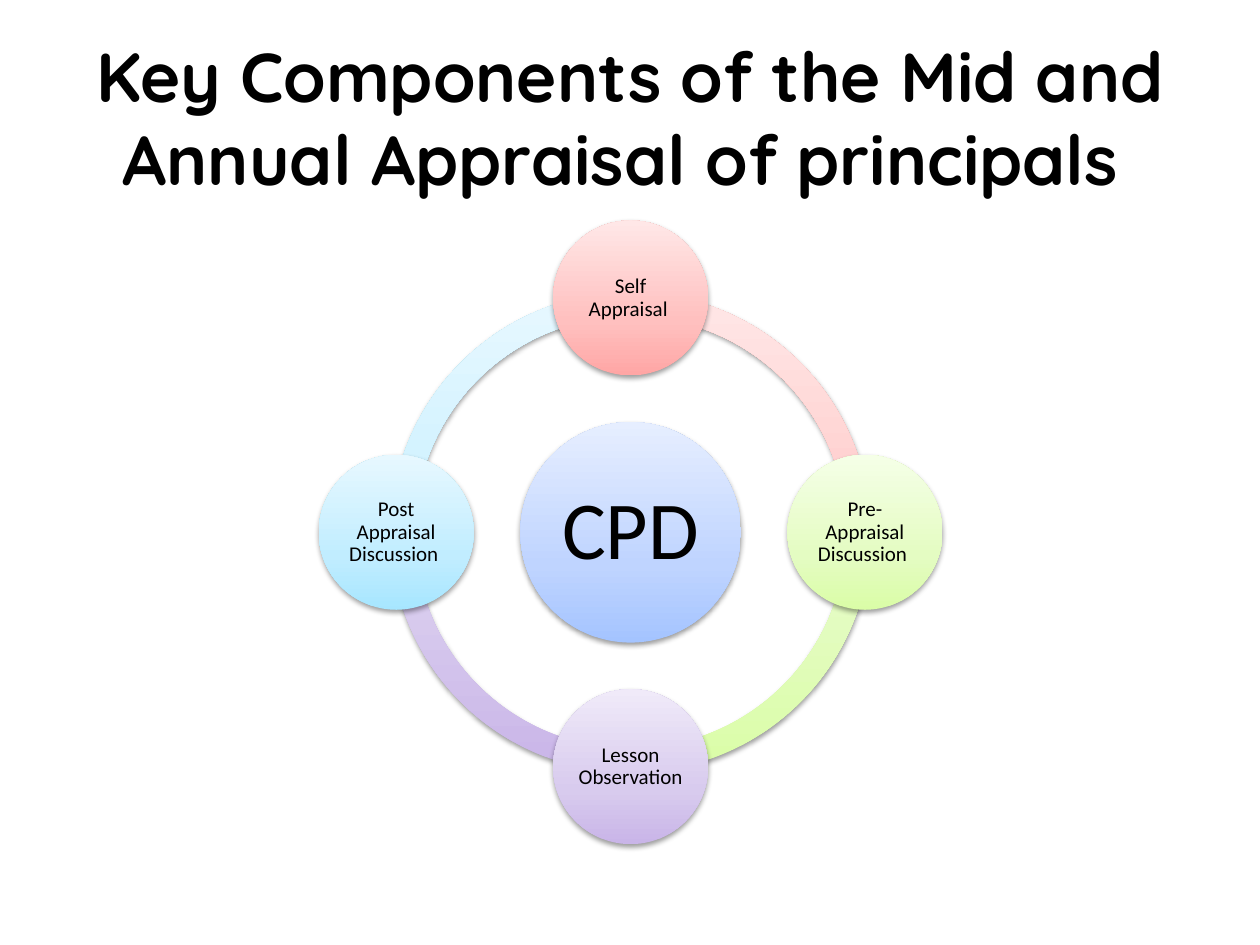
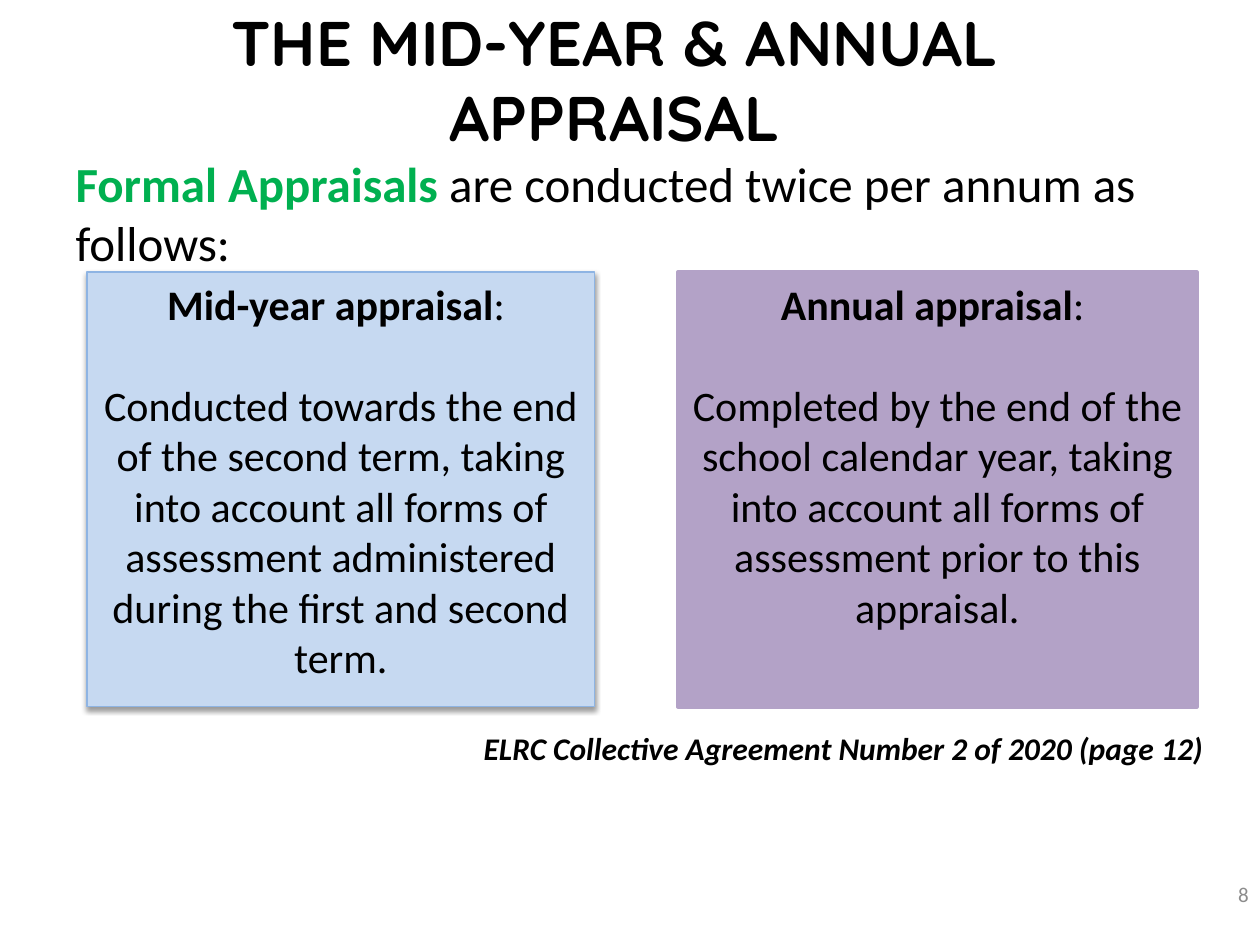
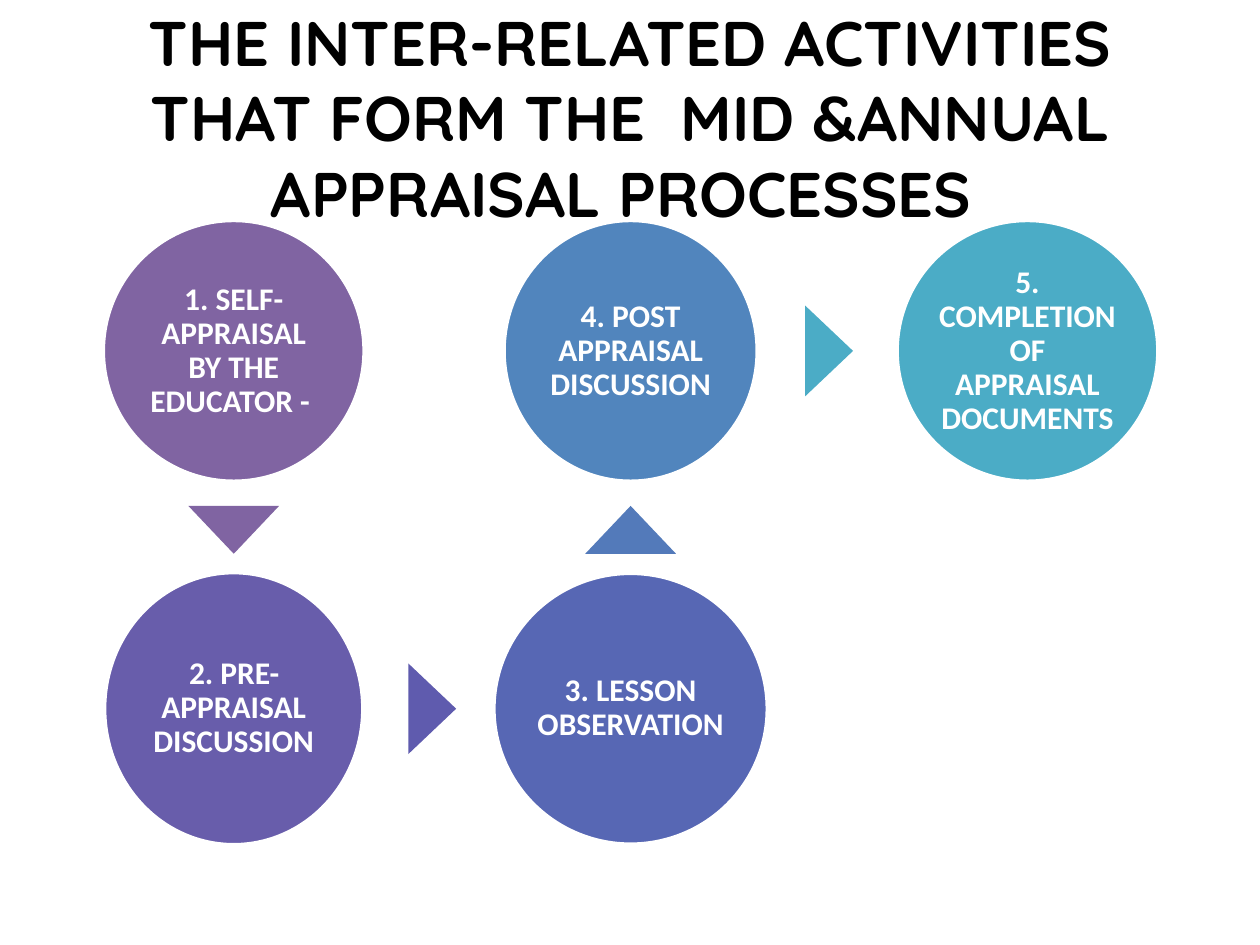
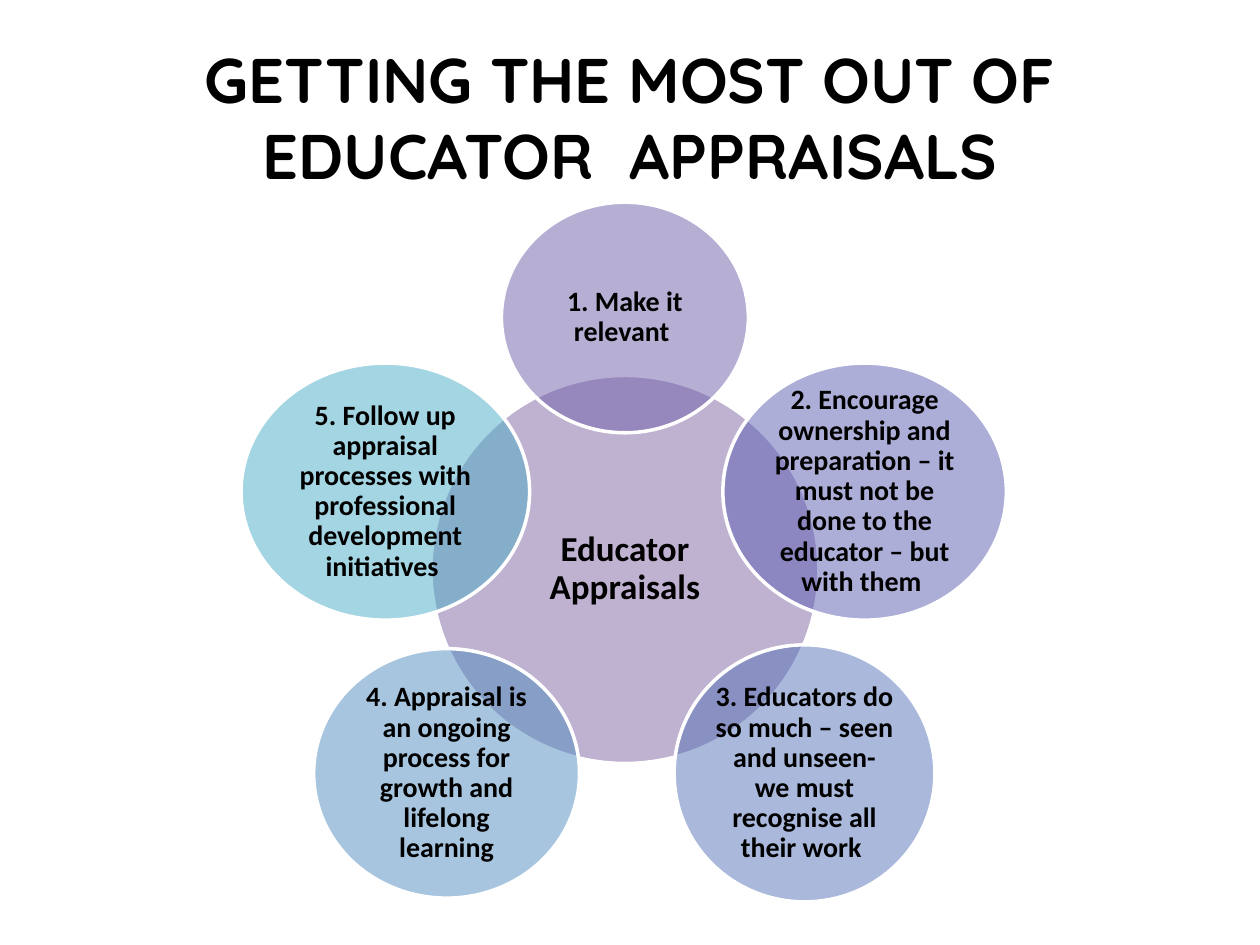
from itertools import pairwise
from math import cos, radians, sin

from lxml import etree
from pptx import Presentation
from pptx.dml.color import RGBColor
from pptx.enum.shapes import MSO_SHAPE
from pptx.enum.text import MSO_ANCHOR, MSO_AUTO_SIZE, PP_ALIGN
from pptx.oxml.ns import qn
from pptx.util import Inches, Pt

ARC, OVAL = MSO_SHAPE.BLOCK_ARC, MSO_SHAPE.OVAL
RECT, WEDGE = MSO_SHAPE.RECTANGLE, MSO_SHAPE.ISOSCELES_TRIANGLE
TOP, MIDDLE = MSO_ANCHOR.TOP, MSO_ANCHOR.MIDDLE
LEFT, CENTER, RIGHT = PP_ALIGN.LEFT, PP_ALIGN.CENTER, PP_ALIGN.RIGHT
FIXED = MSO_AUTO_SIZE.NONE

HEAD, BODY = "Quicksand", "Calibri"
BLACK = RGBColor(0x00, 0x00, 0x00)
WHITE = RGBColor(0xFF, 0xFF, 0xFF)
GRAY = RGBColor(0x8C, 0x8C, 0x8C)
GREEN = RGBColor(0x00, 0xB0, 0x50)
PALE = RGBColor(0xC6, 0xD9, 0xF1)
EDGE = RGBColor(0x8E, 0xB4, 0xE3)
LILAC = RGBColor(0xB3, 0xA2, 0xC7)
PURPLE = RGBColor(0x80, 0x64, 0xA2)
GRAPE = RGBColor(0x68, 0x5D, 0xAB)
IRIS = RGBColor(0x5F, 0x5B, 0xAE)
INDIGO = RGBColor(0x57, 0x67, 0xB4)
COBALT = RGBColor(0x53, 0x7A, 0xBA)
STEEL = RGBColor(0x51, 0x85, 0xBD)
TEAL = RGBColor(0x4B, 0xAC, 0xC6)
MAUVE = RGBColor(0x6E, 0x5F, 0xA9)
VIOLET = RGBColor(0x5A, 0x5E, 0xB1)
DENIM = RGBColor(0x55, 0x72, 0xB8)
AZURE = RGBColor(0x50, 0x8C, 0xBF)


def shades(*codes):
    return [RGBColor.from_string(code) for code in codes]


BLUES = shades("A4C4FF", "BFD4FF", "E6EEFF")
REDS = shades("FFA6A5", "FFC0BF", "FFE7E7")
LIMES = shades("DAFDA7", "E4FCC2", "F5FFE7")
PLUMS = shades("C9B5E8", "D8CBEE", "F0EAF9")
SKIES = shades("A7E6FF", "C1EDFF", "E7F8FF")


def add_tag(parent, tag, **attrs):
    node = etree.SubElement(parent, qn(tag))
    for name, value in attrs.items():
        node.set(name, str(value))
    return node


def style(para, size, color=BLACK, bold=False, align=CENTER, font=BODY):
    para.alignment = align
    for run in para.runs:
        run.font.name = font
        run.font.size = Pt(size)
        run.font.bold = bold
        run.font.color.rgb = color


def place(item, box):
    item.left, item.top, item.width, item.height = map(Inches, box)


def add_form(slide, kind, box, color=None, line=None, width=2):
    form = slide.shapes.add_shape(kind, *map(Inches, box))
    form.shadow.inherit = False
    if color is not None:
        form.fill.solid()
        form.fill.fore_color.rgb = color
    if line is None:
        form.line.fill.background()
    else:
        form.line.color.rgb = line
        form.line.width = Pt(width)
    return form


def add_shadow(form):
    effects = form.element.spPr.find(qn("a:effectLst"))
    cast = add_tag(effects, "a:outerShdw", blurRad=Pt(3.1), dist=Pt(1.6),
                   dir=5400000, rotWithShape=0)
    tint = add_tag(cast, "a:srgbClr", val=BLACK)
    add_tag(tint, "a:alpha", val=38000)


def add_blend(form, colors):
    form.fill.gradient()
    form.fill.gradient_angle = 90
    stops = form.element.spPr.find(".//" + qn("a:gsLst"))
    for stop in list(stops):
        stops.remove(stop)
    for spot, color in zip((0, 35000, 100000), colors):
        add_tag(add_tag(stops, "a:gs", pos=spot), "a:srgbClr", val=color)
    add_shadow(form)


def make_clear(form):
    fill = form.element.spPr.find(qn("a:solidFill"))
    add_tag(fill[0], "a:alpha", val=50000)


def centered(x, y, width, height):
    return x - width / 2, y - height / 2, width, height


def add_disc(slide, box, text, size, ink=BLACK, bold=True, color=None, line=WHITE):
    disc = add_form(slide, OVAL, box, color, line)
    frame = disc.text_frame
    frame.word_wrap = True
    frame.vertical_anchor = MIDDLE
    frame.margin_left = frame.margin_right = Inches(0.02)
    frame.margin_top = frame.margin_bottom = Inches(0.02)
    frame.text = text
    para = frame.paragraphs[0]
    para.line_spacing = 0.9
    style(para, size, ink, bold)
    return disc


def add_title(slide, text, size=36, box=(0.5, 0.3, 9, 1.25)):
    title = slide.shapes.title
    place(title, box)
    frame = title.text_frame
    frame.text = text
    frame.auto_size = FIXED
    frame.vertical_anchor = MIDDLE
    style(frame.paragraphs[0], size, bold=True, font=HEAD)


def add_label(slide, box, text, size, color=BLACK, bold=False, align=LEFT):
    label = slide.shapes.add_textbox(*map(Inches, box))
    frame = label.text_frame
    frame.word_wrap = True
    frame.text = text
    style(frame.paragraphs[0], size, color, bold, align)
    return label


def add_cycle(slide, box):
    left, top, side, _ = box
    x, y = left + side / 2, top + side / 2
    node, ring, core = 1.23, 3.81, 1.75
    reach = (side - node) / 2
    for start, colors in ((108, SKIES), (54, PLUMS), (0, LIMES), (162, REDS)):
        arc = add_form(slide, ARC, centered(x, y, ring, ring))
        for i, value in enumerate((start, (start + 54) % 216, 0.05)):
            arc.adjustments[i] = value
        add_blend(arc, colors)
    hub = add_disc(slide, centered(x, y, core, core), "CPD ", 47, bold=False, line=None)
    add_blend(hub, BLUES)
    steps = (("Self Appraisal ", REDS), ("Pre- Appraisal Discussion ", LIMES),
             ("Lesson Observation ", PLUMS), ("Post Appraisal Discussion ", SKIES))
    for i, (text, colors) in enumerate(steps):
        turn = radians(90 * i)
        spot = centered(x + reach * sin(turn), y - reach * cos(turn), node, node)
        add_blend(add_disc(slide, spot, text, 12, bold=False, line=None), colors)


def add_intro(slide, box):
    body = slide.placeholders[1]
    place(body, box)
    frame = body.text_frame
    frame.auto_size = FIXED
    para = frame.paragraphs[0]
    props = para._p.get_or_add_pPr()
    props.set("marL", "0")
    props.set("indent", "0")
    add_tag(props, "a:buNone")
    para.space_before = Pt(0)
    for text in ("Formal Appraisals ", "are conducted twice per annum as follows:"):
        para.add_run().text = text
    style(para, 28, align=LEFT)
    lead = para.runs[0].font
    lead.bold = True
    lead.color.rgb = GREEN


def add_card(slide, box, head, text, color, line, width):
    card = add_form(slide, RECT, box, color, line, width)
    frame = card.text_frame
    frame.word_wrap = True
    frame.vertical_anchor = TOP
    first = frame.paragraphs[0]
    for part in (head, ": "):
        first.add_run().text = part
    second = frame.add_paragraph()
    second.text = text
    second.space_before = Pt(29)
    for para in (first, second):
        style(para, 24)
    first.runs[0].font.bold = True
    return card


def add_flow(slide, box):
    left, top, width, height = box
    across, down, size = 3.15, 2.84, 2.07
    steps = (
        ("1. SELF- APPRAISAL BY THE EDUCATOR - ", PURPLE, 0, 0, 2.07, 2.07),
        ("2. PRE-APPRAISAL DISCUSSION", GRAPE, 0, 1, 2.05, 2.16),
        ("3. LESSON OBSERVATION", INDIGO, 1, 1, 2.17, 2.15),
        ("4. POST APPRAISAL DISCUSSION", STEEL, 1, 0, 2.01, 2.07),
        ("5. COMPLETION OF APPRAISAL DOCUMENTS ", TEAL, 2, 0, 2.07, 2.07),
    )
    spots = []
    for text, color, col, row, wide, high in steps:
        x = left + width / 2 + (col - 1) * across
        y = top + size / 2 + row * down
        spots.append((x, y))
        add_disc(slide, centered(x, y, wide, high), text, 18, WHITE, color=color)
    tints = (PURPLE, IRIS, COBALT, TEAL)
    for ((x1, y1), (x2, y2)), color in zip(pairwise(spots), tints):
        spot = centered((x1 + x2) / 2, (y1 + y2) / 2, 0.72, 0.38)
        wedge = add_form(slide, WEDGE, spot, color)
        wedge.rotation = 90 if x2 > x1 else 180 if y2 > y1 else 0


def add_petals(slide, box):
    left, top, side, _ = box
    x, y = left + side / 2, top + side / 2
    reach = 2
    hub = add_disc(slide, box, "Educator Appraisals", 20, color=PURPLE)
    make_clear(hub)
    petals = (
        ("1. Make it relevant ", MAUVE, 1.96, 1.83, 0),
        ("2. Encourage ownership and preparation – it must not be done to the "
         "educator – but with them ", VIOLET, 2.25, 2.04, 0),
        ("3. Educators do so much – seen and unseen- we must recognise all "
         "their work ", DENIM, 2.07, 2.04, 0.25),
        ("4. Appraisal is an ongoing process for growth and lifelong learning",
         AZURE, 2.11, 1.98, -0.24),
        ("5. Follow up appraisal processes with professional development "
         "initiatives ", TEAL, 2.29, 2.04, 0),
    )
    for i, (text, color, wide, high, push) in enumerate(petals):
        turn = radians(72 * i)
        spot = centered(x + reach * sin(turn) + push, y - reach * cos(turn), wide, high)
        make_clear(add_disc(slide, spot, text, 16, color=color))


def build_parts(slide):
    add_title(slide, "Key Components of the Mid and Annual Appraisal of principals ", 39.6)
    add_cycle(slide, (2.53, 1.75, 4.95, 4.95))


def build_terms(slide):
    add_title(slide, "THE MID-YEAR & ANNUAL APPRAISAL", box=(0.38, 0, 9, 1.25))
    add_intro(slide, (0.5, 1.17, 9, 4.79))
    card = add_card(
        slide, (0.69, 2.16, 4.03, 3.45), "Mid-year appraisal",
        "Conducted towards the end of the second term, taking into account all "
        "forms of assessment administered during the first and second term.",
        PALE, EDGE, 0.75)
    add_shadow(card)
    add_card(
        slide, (5.38, 2.16, 4.12, 3.45), "Annual appraisal",
        "Completed by the end of the school calendar year, taking into account "
        "all forms of assessment prior to this appraisal.",
        LILAC, LILAC, 2)
    cite = add_label(slide, (3.74, 5.74, 6.43, 0.4),
                     "ELRC Collective Agreement Number 2 of 2020 (page 12)", 18, bold=True)
    cite.text_frame.paragraphs[0].runs[0].font.italic = True
    page = add_label(slide, (7.68, 6.9, 2.33, 0.4), "8", 12, GRAY, align=RIGHT)
    page.text_frame.vertical_anchor = MIDDLE


def build_steps(slide):
    add_title(slide, "THE INTER-RELATED ACTIVITIES THAT FORM THE  MID &ANNUAL "
                     "APPRAISAL PROCESSES ")
    add_flow(slide, (0.82, 1.75, 8.37, 4.95))


def build_tips(slide):
    add_title(slide, "GETTING THE MOST OUT OF EDUCATOR  APPRAISALS")
    add_petals(slide, (3.42, 2.98, 3.08, 3.08))


def main():
    deck = Presentation()
    deck.slide_width, deck.slide_height = Inches(10), Inches(7.5)
    full, plain = deck.slide_layouts[1], deck.slide_layouts[5]
    pages = ((plain, build_parts), (full, build_terms),
             (plain, build_steps), (plain, build_tips))
    for layout, build in pages:
        build(deck.slides.add_slide(layout))
    deck.save("out.pptx")


if __name__ == "__main__":
    main()
